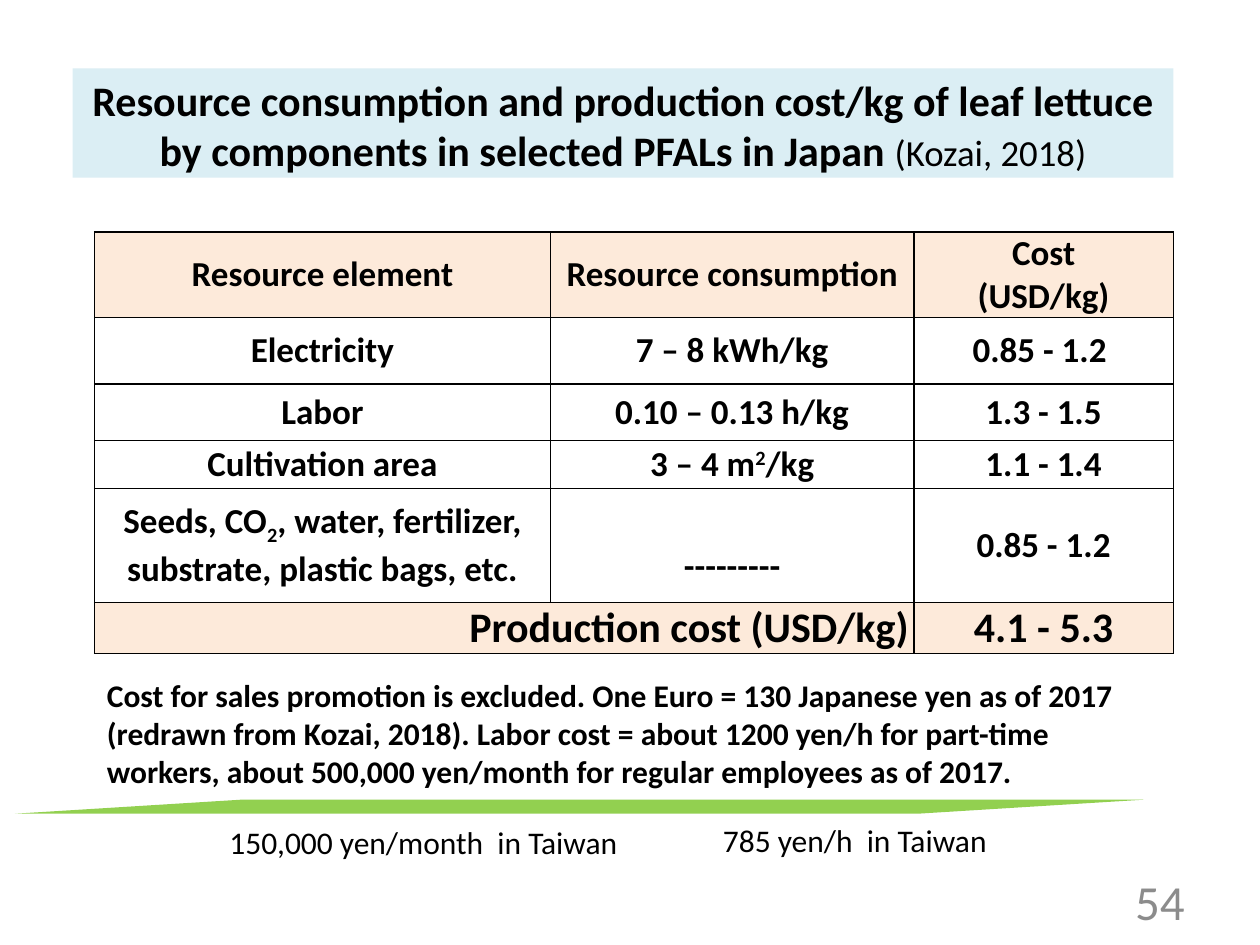
from pptx import Presentation
from pptx.dml.color import RGBColor
from pptx.enum.shapes import MSO_SHAPE as Shape
from pptx.enum.text import MSO_ANCHOR as Anchor, PP_ALIGN as Align
from pptx.oxml import parse_xml
from pptx.oxml.ns import nsdecls
from pptx.util import Pt

COLORS = {"text": "000000", "title": "DBEEF4", "accent": "FDEADA",
          "body": "FFFFFF", "band": "92D050", "number": "8C8C8C"}
FONT = "Calibri"

# A paragraph is a list of (text, format) runs
TITLE = [("Resource consumption and production cost/kg of leaf lettuce "
          "by components in selected PFALs in Japan ", {}),
         ("(Kozai, 2018)", {"size": Pt(21), "bold": False})]
SUPERSCRIPT, SUBSCRIPT = {"baseline": 30000}, {"baseline": -25000}

# A cell is a string, or a list of paragraphs
ROWS = [
    ("Resource element", "Resource consumption", ["Cost", "(USD/kg)"]),
    ("Electricity", "7 – 8 kWh/kg", "0.85 - 1.2 "),
    ("Labor", "0.10 – 0.13 h/kg", "1.3 - 1.5"),
    ("Cultivation area",
     [[("3 – 4 m", {}), ("2", SUPERSCRIPT), ("/kg", {})]], "1.1 - 1.4"),
    ([[("Seeds, CO", {}), ("2", SUBSCRIPT),
       (", water, fertilizer, substrate, plastic bags, etc.", {})]],
     "---------", "0.85 - 1.2"),
    ("Production cost (USD/kg)", "", "4.1 - 5.3"),
]
COLUMN_WIDTHS = [260.5, 207.8, 148.2]
ROW_HEIGHTS = [49, 38, 32.2, 27.5, 65, 27.5]
TABLE_LEFT, TABLE_TOP = 54, 132.5
SUPPLIES_ROW, TOTAL_ROW = 4, 5

# left, top, width, height, text, format, alignment, anchor
TEXT_BOXES = [
    (54, 383, 616, 73,
     "Cost for sales promotion is excluded. One Euro = 130 Japanese yen as of "
     "2017 (redrawn from Kozai, 2018). Labor cost = about 1200 yen/h for "
     "part-time workers, about 500,000 yen/month for regular employees as of 2017.",
     {"size": Pt(18), "bold": True}, Align.LEFT, Anchor.TOP),
    (124, 466.8, 278, 29, "150,000 yen/month  in Taiwan",
     {"size": Pt(18)}, Align.LEFT, Anchor.TOP),
    (406, 465.4, 278, 29, "785 yen/h  in Taiwan",
     {"size": Pt(18)}, Align.LEFT, Anchor.TOP),
    (516, 500.5, 168, 29, "54",
     {"size": Pt(28), "color": "number"}, Align.RIGHT, Anchor.MIDDLE),
]


def fill(target, color):
    target.fill.solid()
    target.fill.fore_color.rgb = RGBColor.from_string(COLORS[color])


def write_paragraph(paragraph, content, style, alignment):
    paragraph.alignment = alignment
    runs = [(content, {})] if isinstance(content, str) else content
    for text, changes in runs:
        run = paragraph.add_run()
        run.text = text
        values = {"name": FONT, "color": "text", **style, **changes}
        color = values.pop("color")
        baseline = values.pop("baseline", None)
        for name, value in values.items():
            setattr(run.font, name, value)
        run.font.color.rgb = RGBColor.from_string(COLORS[color])
        if baseline:
            run.font._element.set("baseline", str(baseline))


def write_frame(frame, paragraphs, style, alignment):
    for index, content in enumerate(paragraphs):
        paragraph = frame.add_paragraph() if index else frame.paragraphs[0]
        write_paragraph(paragraph, content, style, alignment)


def add_borders(cell):
    """Put the four side lines ahead of the cell's fill, as the schema asks."""
    properties = cell._tc.get_or_add_tcPr()
    for index, side in enumerate(("lnL", "lnR", "lnT", "lnB")):
        properties.insert(index, parse_xml(
            f'<a:{side} {nsdecls("a")} w="{Pt(1)}"><a:solidFill>'
            f'<a:srgbClr val="{COLORS["text"]}"/></a:solidFill></a:{side}>'))


def add_title(slide):
    title = slide.shapes.title
    title.left, title.top, title.width, title.height = map(Pt, (41.5, 39, 629, 62.5))
    fill(title, "title")
    title.text_frame.word_wrap = True
    title.text_frame.vertical_anchor = Anchor.TOP
    write_frame(title.text_frame, [TITLE], {"size": Pt(24), "bold": True}, Align.CENTER)


def add_cost_table(slide):
    table = slide.shapes.add_table(
        len(ROWS), len(COLUMN_WIDTHS), Pt(TABLE_LEFT), Pt(TABLE_TOP),
        Pt(sum(COLUMN_WIDTHS)), Pt(sum(ROW_HEIGHTS))).table
    for column, width in zip(table.columns, COLUMN_WIDTHS):
        column.width = Pt(width)
    for row, height in zip(table.rows, ROW_HEIGHTS):
        row.height = Pt(height)
    table.cell(TOTAL_ROW, 0).merge(table.cell(TOTAL_ROW, 1))

    for row, contents in enumerate(ROWS):
        total = row == TOTAL_ROW
        for column, content in enumerate(contents):
            cell = table.cell(row, column)
            cell.margin_left = cell.margin_right = Pt(3)
            cell.margin_top = cell.margin_bottom = Pt(0)
            cell.vertical_anchor = Anchor.TOP if total else Anchor.MIDDLE
            fill(cell, "accent" if row == 0 or total else "body")
            add_borders(cell)
            if content:
                write_frame(cell.text_frame,
                            [content] if isinstance(content, str) else content,
                            {"size": Pt(24 if total else 20), "bold": True},
                            Align.RIGHT if total and column == 0 else Align.CENTER)
    # The dashes stand level with the second line of the supplies
    table.cell(SUPPLIES_ROW, 1).margin_top = Pt(24.4)


def add_band(slide):
    band = slide.shapes.add_shape(Shape.FLOWCHART_DATA, Pt(8.6), Pt(457), Pt(645), Pt(8))
    band.shadow.inherit = False
    fill(band, "band")
    band.line.fill.background()


def add_text_boxes(slide):
    for left, top, width, height, text, style, alignment, anchor in TEXT_BOXES:
        frame = slide.shapes.add_textbox(*map(Pt, (left, top, width, height))).text_frame
        frame.word_wrap = True
        frame.vertical_anchor = anchor
        write_frame(frame, [text], style, alignment)


def main():
    presentation = Presentation()
    presentation.slide_width, presentation.slide_height = Pt(720), Pt(540)
    slide = presentation.slides.add_slide(presentation.slide_layouts[5])
    add_title(slide)
    add_cost_table(slide)
    add_band(slide)
    add_text_boxes(slide)
    presentation.save("out.pptx")


if __name__ == "__main__":
    main()
